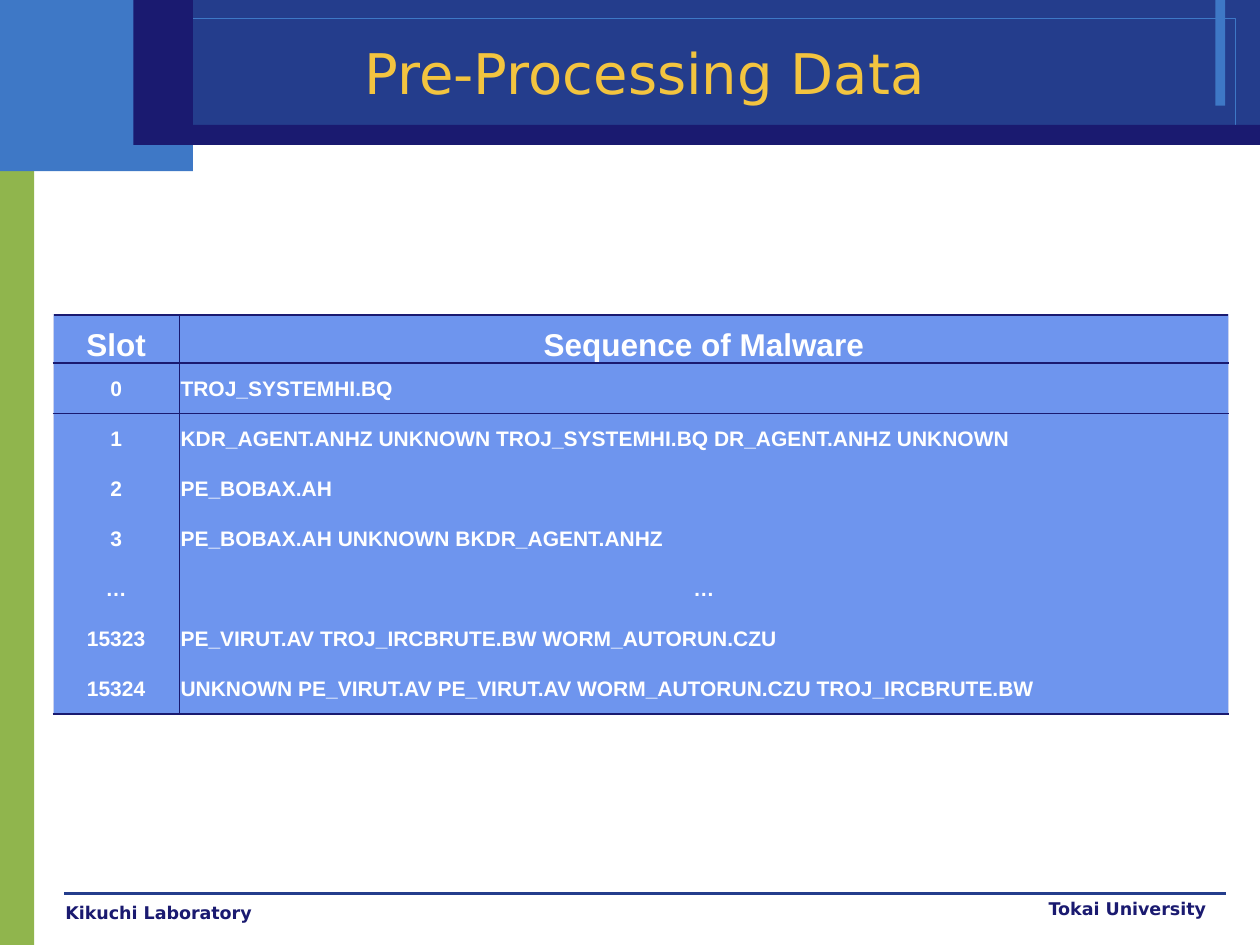
from pptx import Presentation
from pptx.dml.color import RGBColor
from pptx.enum.shapes import MSO_CONNECTOR, MSO_SHAPE
from pptx.enum.text import MSO_ANCHOR, PP_ALIGN
from pptx.oxml.ns import qn
from pptx.util import Cm, Pt
from lxml.etree import SubElement

NAVY, INDIGO, BLUE, GREEN = "243D8C", "1A1A70", "3E78C6", "90B54D"
GOLD, WHITE, CELL_FILL, PALE = "F3C43F", "FFFFFF", "6E95EE", "C9D2F0"

ROWS = [
    ("Slot", "Sequence of Malware"),
    ("0", "TROJ_SYSTEMHI.BQ"),
    ("1", "KDR_AGENT.ANHZ UNKNOWN TROJ_SYSTEMHI.BQ DR_AGENT.ANHZ UNKNOWN"),
    ("2", "PE_BOBAX.AH"),
    ("3", "PE_BOBAX.AH UNKNOWN BKDR_AGENT.ANHZ"),
    ("…", "…"),
    ("15323", "PE_VIRUT.AV TROJ_IRCBRUTE.BW WORM_AUTORUN.CZU"),
    ("15324", "UNKNOWN PE_VIRUT.AV PE_VIRUT.AV WORM_AUTORUN.CZU TROJ_IRCBRUTE.BW"),
]


def rgb(color):
    return RGBColor.from_string(color)


def style(p, size, color, font, align=PP_ALIGN.LEFT, bold=False):
    p.alignment = align
    p.font.size, p.font.name, p.font.bold = Pt(size), font, bold
    p.font.color.rgb = rgb(color)


def add_band(s, x, y, w, h, fill=None, line=None):
    sp = s.shapes.add_shape(MSO_SHAPE.RECTANGLE, Cm(x), Cm(y), Cm(w), Cm(h))
    sp.shadow.inherit = False
    if fill:
        sp.fill.solid()
        sp.fill.fore_color.rgb = rgb(fill)
    else:
        sp.fill.background()
    if line:
        sp.line.color.rgb = rgb(line)
        sp.line.width = Pt(0)
    else:
        sp.line.fill.background()


def add_rule(s, x1, x2, y):
    line = s.shapes.add_connector(MSO_CONNECTOR.STRAIGHT, Cm(x1), Cm(y), Cm(x2), Cm(y))
    line.line.color.rgb = rgb(NAVY)
    line.line.width = Pt(0)
    SubElement(line._element.spPr, qn("a:effectLst"))


def set_title(s, text):
    sp = s.shapes.title
    sp.left, sp.top, sp.width, sp.height = Cm(2.08), Cm(0.66), Cm(21.84), Cm(1.57)
    tf = sp.text_frame
    tf.text = text
    tf.vertical_anchor = MSO_ANCHOR.MIDDLE
    style(tf.paragraphs[0], 32, GOLD, "DejaVu Sans", PP_ALIGN.CENTER)
    s.shapes._spTree.append(sp._element)  # in front of the bands


def add_label(s, x, y, w, text, align):
    tf = s.shapes.add_textbox(Cm(x), Cm(y), Cm(w), Cm(0.64)).text_frame
    tf.word_wrap = True
    tf.text = text
    style(tf.paragraphs[0], 10, INDIGO, "DejaVu Sans", align, bold=True)


def set_border(cell, side, color=None, width=1):
    ln = SubElement(cell._tc.get_or_add_tcPr(), qn(f"a:ln{side}"), w=str(Pt(width)))
    if color:
        fill = SubElement(ln, qn("a:solidFill"))
        SubElement(fill, qn("a:srgbClr"), val=color)
    else:
        SubElement(ln, qn("a:noFill"))


def format_cell(cell, row, col):
    # Column divider, pale outer sides, rules around the first two rows and at the end
    for side, outer in (("L", col == 0), ("R", col == 1)):
        set_border(cell, side, PALE if outer else INDIGO, 0.75)
    for side, edge in (("T", row), ("B", row + 1)):
        ruled = edge in (0, 1, 2, len(ROWS))
        set_border(cell, side, INDIGO if ruled else None, 0.75 if edge == 2 else 1)
    cell.fill.solid()
    cell.fill.fore_color.rgb = rgb(CELL_FILL)

    cell.margin_left = cell.margin_right = cell.margin_top = Cm(0.03)
    cell.margin_bottom = 0
    cell.text = ROWS[row][col]
    cell.vertical_anchor = MSO_ANCHOR.BOTTOM if row == 0 else MSO_ANCHOR.MIDDLE
    centred = row == 0 or col == 0 or cell.text == "…"
    style(cell.text_frame.paragraphs[0], 18 if row == 0 else 12, WHITE, "Arial",
          PP_ALIGN.CENTER if centred else PP_ALIGN.LEFT, bold=True)


def add_malware_table(s):
    table = s.shapes.add_table(len(ROWS), 2, Cm(1.07), Cm(6.35), Cm(23.7), Cm(8.04)).table
    table.first_row = table.horz_banding = False
    for column, width in zip(table.columns, (2.54, 21.16)):
        column.width = Cm(width)
    for i, row in enumerate(table.rows):
        row.height = Cm(0.97 if i == 0 else 1.01)
        for j, cell in enumerate(row.cells):
            format_cell(cell, i, j)


def main():
    prs = Presentation()
    prs.slide_width, prs.slide_height = Cm(25.4), Cm(19.05)
    s = prs.slides.add_slide(prs.slide_layouts[5])

    # Background bands
    add_band(s, 0, 2.72, 0.69, 16.33, GREEN)
    add_band(s, 0, 0, 3.89, 3.45, BLUE)
    add_band(s, 3.89, 0, 21.51, 2.92, NAVY)
    add_band(s, 24.5, 0, 0.2, 2.13, BLUE)
    add_band(s, 0.51, 0.37, 24.4, 2.16, line=BLUE)
    add_rule(s, 1.3, 24.71, 18.01)
    add_band(s, 3.3, 2.52, 22.1, 0.4, INDIGO)
    add_band(s, 2.69, 0, 1.2, 2.92, INDIGO)

    # Title, footer and table
    set_title(s, "Pre-Processing Data")
    add_label(s, 1.07, 18.06, 6.99, "Kikuchi Laboratory", PP_ALIGN.LEFT)
    add_label(s, 19.48, 17.98, 5.08, "Tokai University", PP_ALIGN.RIGHT)
    add_malware_table(s)

    prs.save("out.pptx")


if __name__ == "__main__":
    main()
